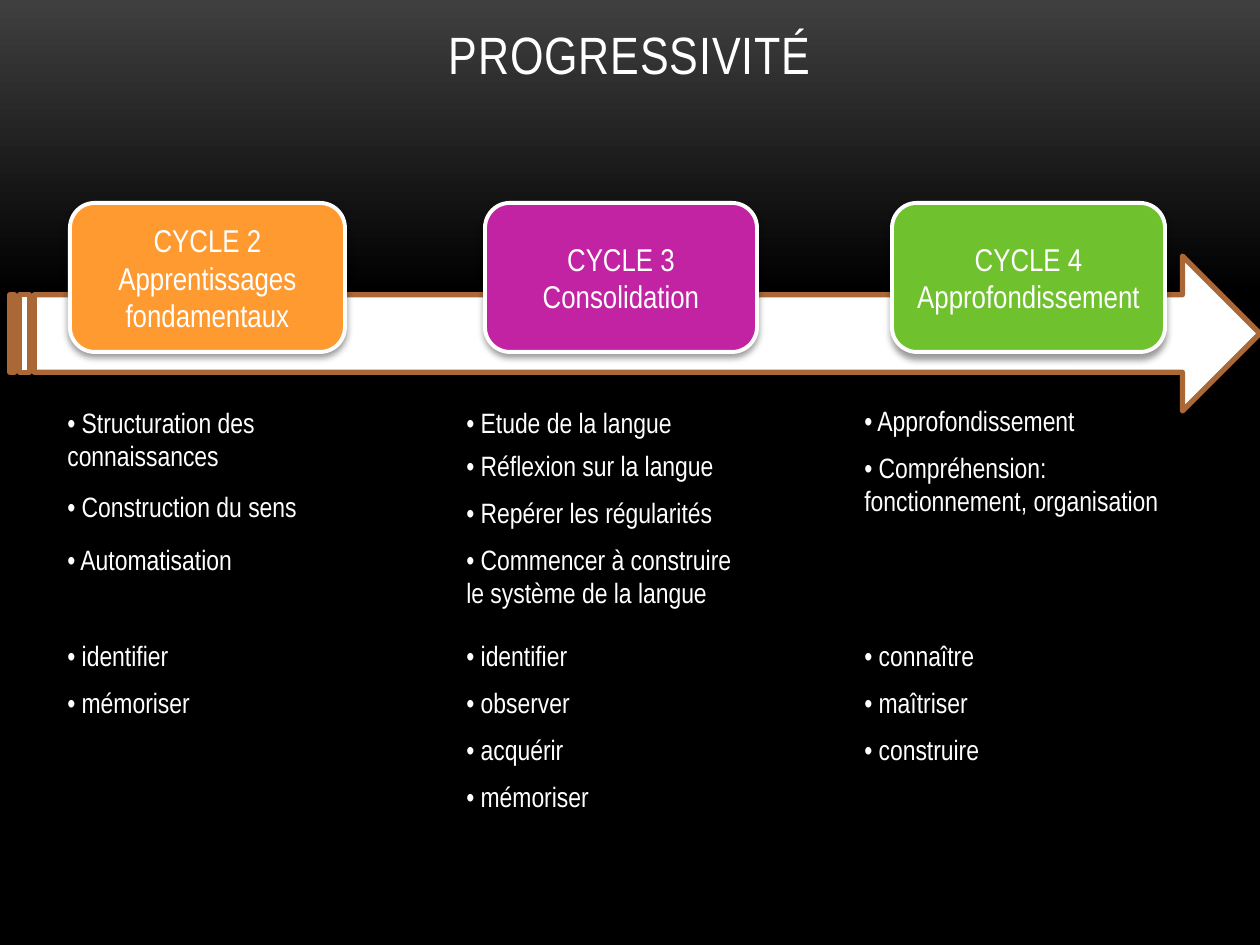
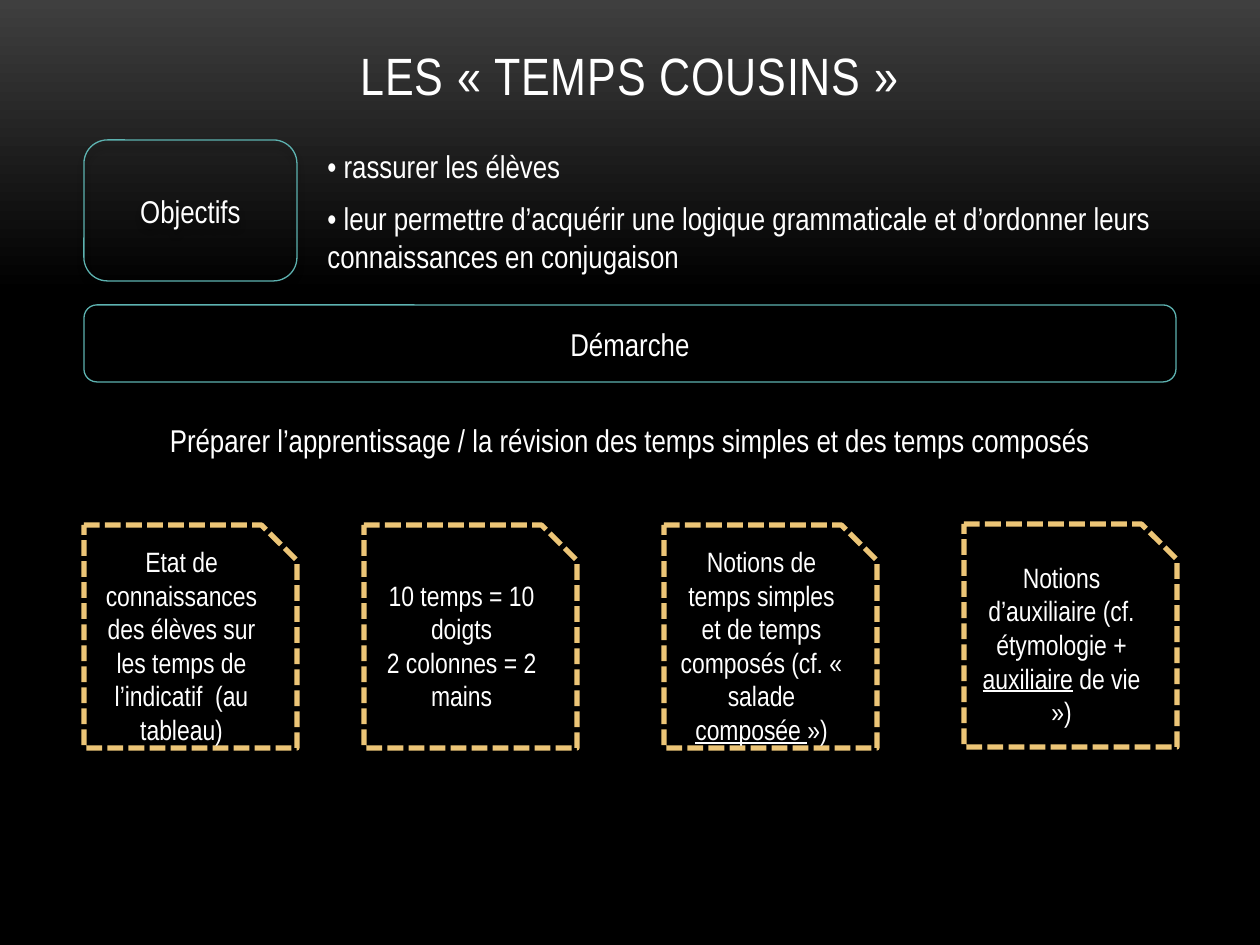
from lxml import etree
from copy import deepcopy
from pptx import Presentation
from pptx.dml.color import RGBColor
from pptx.enum.dml import MSO_LINE as Dash
from pptx.enum.shapes import MSO_SHAPE as Kind
from pptx.enum.text import MSO_ANCHOR as Anchor, MSO_AUTO_SIZE as Fit, PP_ALIGN as Align
from pptx.oxml.ns import qn
from pptx.util import Pt

PX = 914400 / 126
FONT = "Arial Narrow"
HUES = {
    "white": "FFFFFF", "black": "000000", "grey": "3F3F3F", "brown": "AA6837",
    "orange": "FF9A30", "purple": "C223A3", "green": "6FC12D",
    "teal": "5DB2B0", "gold": "ECC577",
}


def emu(*sizes):
    return [round(size * PX) for size in sizes]


def hue(name):
    return RGBColor.from_string(HUES[name])


def write(frame, text, size=16, align=Align.LEFT, anchor=Anchor.TOP, gap=0):
    """Fill a frame: a new line starts a paragraph, _..._ underlines."""
    frame.word_wrap = True
    frame.vertical_anchor = anchor
    for num, line in enumerate(text.split("\n")):
        para = frame.paragraphs[0] if num == 0 else frame.add_paragraph()
        para.alignment = align
        for part, words in enumerate(line.split("_")):
            run = para.add_run()
            run.text = words
            font = run.font
            font.name, font.size = FONT, Pt(size)
            font.color.rgb = hue("white")
            if part % 2:
                font.underline = True
            if gap:
                run._r.get_or_add_rPr().set("spc", str(gap))


def label(slide, box, text, grow=True, **style):
    area = slide.shapes.add_textbox(*emu(*box))
    write(area.text_frame, text, **style)
    if grow:
        area.text_frame.auto_size = Fit.SHAPE_TO_FIT_TEXT


def shade(shape, drop):
    """Cast a soft black shadow straight down."""
    effects = shape._element.spPr.find(qn("a:effectLst"))
    outer = etree.SubElement(effects, qn("a:outerShdw"), blurRad=str(Pt(4)),
                             dist=str(Pt(drop)), dir="5400000", rotWithShape="0")
    tint = etree.SubElement(outer, qn("a:srgbClr"), val=HUES["black"])
    etree.SubElement(tint, qn("a:alpha"), val="40000")


def block(slide, kind, box, edge, width, fill=None, drop=0, dash=None, text="", size=18):
    shape = slide.shapes.add_shape(kind, *emu(*box))
    shape.shadow.inherit = False
    if fill:
        shape.fill.solid()
        shape.fill.fore_color.rgb = hue(fill)
    else:
        shape.fill.background()
    shape.line.color.rgb = hue(edge)
    shape.line.width = Pt(width)
    if dash:
        shape.line.dash_style = dash
    if drop:
        shade(shape, drop)
    if text:
        write(shape.text_frame, text, size=size, align=Align.CENTER, anchor=Anchor.MIDDLE)


def page(deck, title, top, height):
    """Add a slide with the shared dark backdrop and title."""
    slide = deck.slides.add_slide(deck.slide_layouts[6])
    fill = slide.background.fill
    fill.gradient()
    fill.gradient_angle = 270
    for stop, name, place in zip(fill.gradient_stops, ("grey", "black"), (0, 0.31)):
        stop.color.rgb = hue(name)
        stop.position = place
    last = slide._element.findall(".//" + qn("a:gs"))[-1]
    end = deepcopy(last)
    end.set("pos", "100000")
    last.addnext(end)
    label(slide, (84, top, 1092, height), title, grow=False, size=30,
          align=Align.CENTER, anchor=Anchor.BOTTOM, gap=50)
    return slide


def column(slide, left, goals, verbs, width=302):
    """Stack the goals of a cycle, then its verbs at an even step."""
    for top, high, text in goals:
        label(slide, (left, top, width, high), "• " + text)
    for num, verb in enumerate(verbs):
        label(slide, (left, 632 + 47 * num, width, 47), "• " + verb)


def cycles(deck):
    slide = page(deck, "PROGRESSIVITÉ", 8, 83)
    block(slide, Kind.STRIPED_RIGHT_ARROW, (10, 256, 1250, 155), "brown", 3,
          fill="white", drop=3.4)

    # Cycle cards on the arrow
    cards = [
        (70, 275, "orange", 2, "CYCLE 2\nApprentissages fondamentaux"),
        (485, 272, "purple", 2, "CYCLE 3\nConsolidation"),
        (892, 273, "green", 3.4, "CYCLE 4\nApprofondissement"),
    ]
    for left, width, fill, drop, text in cards:
        block(slide, Kind.ROUNDED_RECTANGLE, (left, 203, width, 149), "white", 2.25,
              fill=fill, drop=drop, text=text)

    # Goals and verbs below
    column(slide, 55, [
        (399, 81, "Structuration des connaissances"),
        (483, 47, "Construction du sens"),
        (536, 47, "Automatisation"),
    ], ["identifier", "mémoriser"])
    column(slide, 454, [
        (399, 47, "Etude de la langue"),
        (442, 47, "Réflexion sur la langue"),
        (489, 47, "Repérer les régularités"),
        (536, 81, "Commencer à construire le système de la langue"),
    ], ["identifier", "observer", "acquérir", "mémoriser"])
    column(slide, 852, [
        (397, 47, "Approfondissement"),
        (444, 81, "Compréhension: fonctionnement, organisation"),
    ], ["connaître", "maîtriser", "construire"], width=325)


def tenses(deck):
    slide = page(deck, "LES « TEMPS COUSINS »", 10, 102)

    # Headings
    for box, text in [((84, 140, 213, 141), "Objectifs"), ((84, 305, 1092, 77), "Démarche")]:
        block(slide, Kind.ROUNDED_RECTANGLE, box, "teal", 0.75, drop=3.4, text=text)

    # Aims and method
    label(slide, (315, 141, 261, 50), "• rassurer les élèves", size=18)
    label(slide, (315, 193, 861, 89), "• leur permettre d’acquérir une logique grammaticale "
          "et d’ordonner leurs connaissances en conjugaison", size=18)
    label(slide, (84, 415, 1092, 89), "Préparer l’apprentissage / la révision des temps "
          "simples et des temps composés", size=18, align=Align.CENTER)

    # Steps
    steps = [
        (84, 525, "Etat de connaissances des élèves sur les temps de l’indicatif  (au tableau)"),
        (364, 525, "10 temps = 10 doigts\n2 colonnes = 2 mains"),
        (664, 525, "Notions de temps simples et de temps composés (cf. « salade _composée _»)"),
        (964, 524, "Notions d’auxiliaire (cf. étymologie + _auxiliaire_ de vie »)"),
    ]
    for left, top, text in steps:
        block(slide, Kind.SNIP_1_RECTANGLE, (left, top, 213, 223), "gold", 3,
              dash=Dash.SQUARE_DOT, text=text, size=16)


def main():
    deck = Presentation()
    deck.slide_width, deck.slide_height = emu(1260, 945)
    cycles(deck)
    tenses(deck)
    deck.save("out.pptx")


if __name__ == "__main__":
    main()
